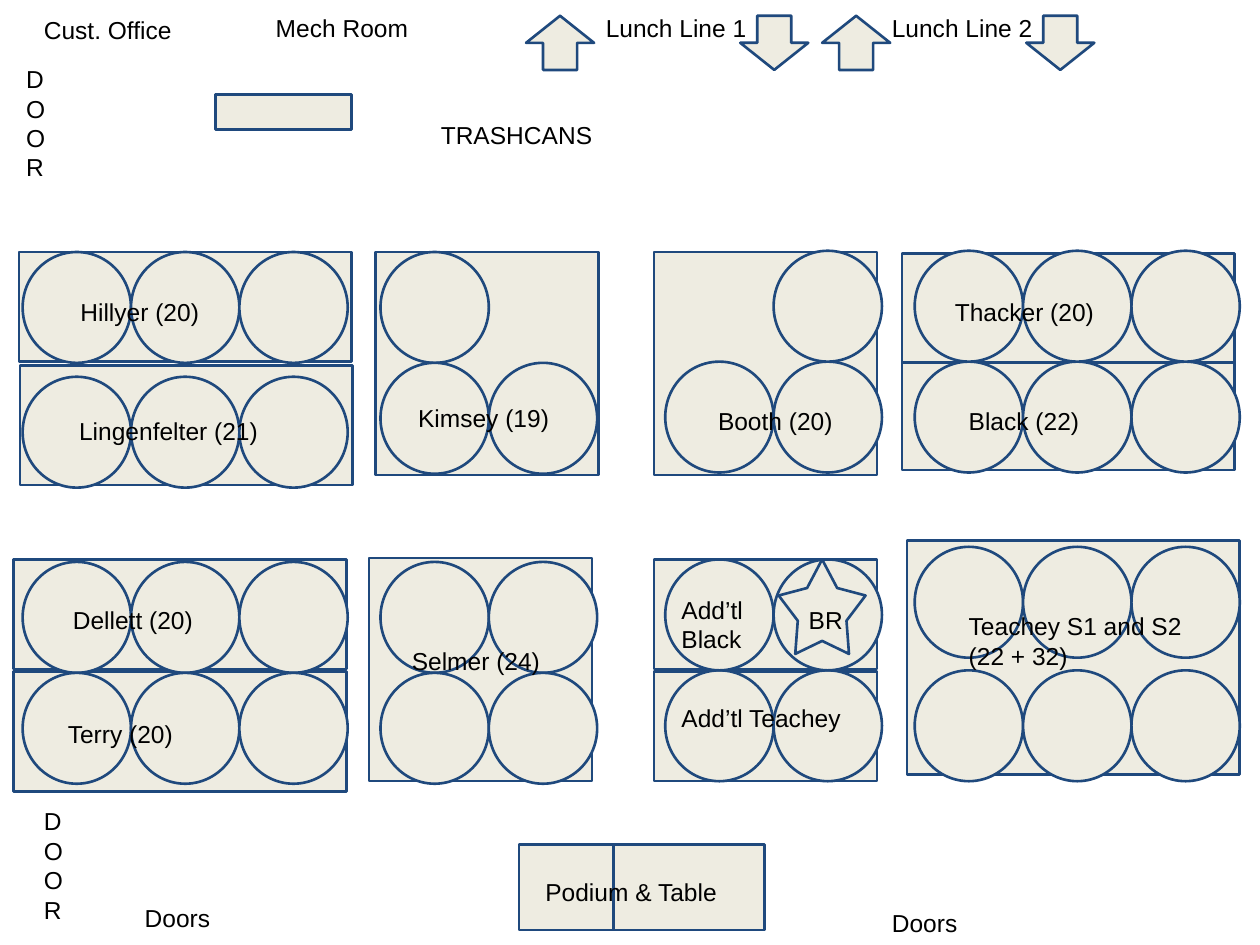
from pptx import Presentation
from pptx.dml.color import RGBColor
from pptx.enum import shapes, text
from pptx.util import Inches, Pt

COLORS = {"fill": "EEECE1", "line": "1F497D", "text": "000000"}
SHAPE = shapes.MSO_SHAPE

prs = Presentation()
prs.slide_width, prs.slide_height = Inches(10), Inches(7.5)
s = prs.slides.add_slide(prs.slide_layouts[6])


def add_outlined(kind, *box):
    sp = s.shapes.add_shape(kind, *map(Inches, box))
    sp.shadow.inherit = False
    sp.fill.solid()
    sp.fill.fore_color.rgb = RGBColor.from_string(COLORS["fill"])
    sp.line.color.rgb = RGBColor.from_string(COLORS["line"])
    sp.line.width = Pt(1.5)
    return sp


def add_label(words, *box):
    tf = s.shapes.add_textbox(*map(Inches, box)).text_frame
    tf.word_wrap = True
    tf.vertical_anchor = text.MSO_ANCHOR.TOP
    tf.margin_left = tf.margin_right = tf.margin_top = tf.margin_bottom = Inches(0.1)
    tf.text = words
    for p in tf.paragraphs:
        for r in p.runs:
            r.font.name = "Arial"
            r.font.size = Pt(14)
            r.font.color.rgb = RGBColor.from_string(COLORS["text"])


# Seating areas
areas = [
    (5.19, 4.44, 1.77, 0.87),
    (0.11, 5.33, 2.64, 0.95),
    (7.2, 4.29, 2.64, 1.86),
    (0.11, 4.44, 2.64, 0.87),
    (7.16, 2.86, 2.64, 0.87),
    (7.16, 2.01, 2.64, 0.87),
    (5.19, 5.33, 1.77, 0.87),
    (2.93, 4.43, 1.77, 1.77),
    (2.98, 2, 1.77, 1.77),
    (5.19, 2, 1.77, 1.77),
    (0.16, 2.9, 2.64, 0.95),
    (0.15, 2, 2.64, 0.87),
]
for box in areas:
    add_outlined(SHAPE.RECTANGLE, *box)

# Rows of round tables: left of the first, top, number of tables
TABLE_W, TABLE_H = 0.86, 0.88
table_rows = [
    (0.18, 2, 3), (0.18, 2.99, 3), (0.18, 4.46, 3), (0.18, 5.34, 3),
    (3.02, 2, 1), (3.02, 2.88, 2), (3.02, 4.46, 2), (3.02, 5.34, 2),
    (7.26, 5.32, 3), (7.26, 4.34, 3), (7.26, 2.87, 3), (7.26, 1.99, 3),
    (5.28, 5.32, 2), (5.28, 4.44, 2), (5.28, 2.87, 2), (6.14, 1.99, 1),
]
for left, top, count in table_rows:
    for i in range(count):
        add_outlined(SHAPE.OVAL, left + i * TABLE_W, top, TABLE_W, TABLE_H)

# Podium and its table, a plain counter, and the star
for box in [(4.12, 6.7, 0.75, 0.68), (4.87, 6.7, 1.2, 0.68), (1.71, 0.75, 1.08, 0.28)]:
    add_outlined(SHAPE.RECTANGLE, *box)
star = add_outlined(SHAPE.STAR_5_POINT, 6.18, 4.44, 0.69, 0.75)
star.adjustments[0] = 0.28

# Lunch line arrows: in (up) and out (down)
for left, rotation in [(4.23, 270), (6.58, 270), (5.93, 90), (8.2, 90)]:
    arrow = add_outlined(SHAPE.RIGHT_ARROW, left, 0.07, 0.43, 0.54)
    arrow.rotation = rotation

labels = [
    ("Cust. Office", 0.25, 0.02, 1.3, 0.39),
    ("Mech Room", 2.09, 0, 1.53, 0.39),
    ("Lunch Line 1", 4.71, 0, 1.53, 0.39),
    ("Lunch Line 2", 6.98, 0, 1.53, 0.39),
    ("DOOR", 0.11, 0.41, 0.26, 1.08),
    ("TRASHCANS", 3.4, 0.85, 2.48, 0.43),
    ("Hillyer (20)", 0.54, 2.26, 2, 0.35),
    ("Lingenfelter (21)", 0.53, 3.2, 1.77, 0.43),
    ("Kimsey (19)", 3.22, 3.1, 1.3, 0.39),
    ("Booth (20)", 5.6, 3.12, 1.38, 0.43),
    ("Thacker (20)", 7.48, 2.26, 2, 0.35),
    ("Black (22)", 7.59, 3.12, 2, 0.35),
    ("Dellett (20)", 0.48, 4.7, 1.87, 0.35),
    ("Terry (20)", 0.44, 5.61, 2, 0.43),
    ("Selmer (24)", 3.17, 5.03, 1.3, 0.39),
    ("Add’tl Black", 5.31, 4.62, 1.08, 0.39),
    ("BR", 6.32, 4.7, 0.54, 0.35),
    ("Add’tl Teachey", 5.31, 5.48, 1.62, 0.6),
    ("Teachey S1 and S2\n(22 + 32)", 7.59, 4.75, 2, 0.95),
    ("DOOR", 0.25, 6.3, 0.26, 1.08),
    ("Doors", 1.05, 7.07, 0.75, 0.43),
    ("Podium & Table", 4.23, 6.86, 2, 0.39),
    ("Doors", 6.98, 7.11, 0.75, 0.43),
]
for label in labels:
    add_label(*label)

prs.save("out.pptx")
